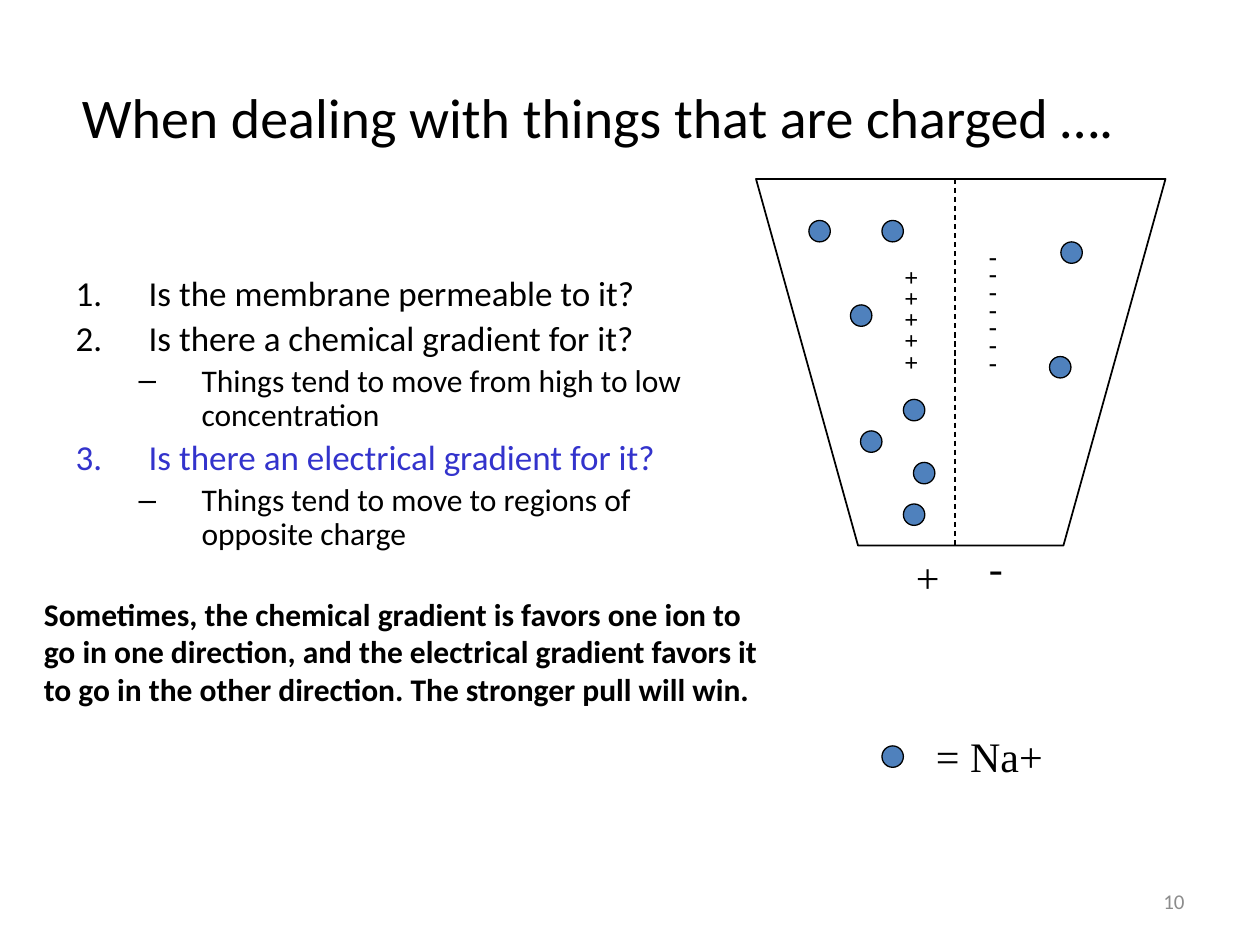
import pptx
import pptx.util
import pptx.dml.color
import pptx.enum.dml
import pptx.enum.shapes
import pptx.enum.text
import pptx.oxml
import pptx.oxml.ns

Inches, Pt = pptx.util.Inches, pptx.util.Pt
ALIGN = pptx.enum.text.PP_ALIGN
ANCHOR = pptx.enum.text.MSO_ANCHOR
AUTO = pptx.enum.text.MSO_AUTO_SIZE
SERIF = "Times New Roman"
BLACK, BLUE, ION = "000000", "3333CC", "4F81BD"

BEAKER = [(6, 1.42), (6.81, 4.33), (8.44, 4.33), (9.25, 1.42)]
DOT = 0.17
IONS = [(6.42, 1.75), (7, 1.75), (6.75, 2.42), (7.17, 3.17), (6.83, 3.42),
        (7.25, 3.67), (7.17, 4), (8.42, 1.92), (8.33, 2.83)]
LEGEND_ION = (7, 5.92)

# Level, text, colour
QUESTIONS = [
    (0, "Is the membrane permeable to it?", BLACK),
    (0, "Is there a chemical gradient for it?", BLACK),
    (1, "Things tend to move from high to low concentration", BLACK),
    (0, "Is there an electrical gradient for it?", BLUE),
    (1, "Things tend to move to regions of opposite charge", BLACK),
]


def rgb(color):
    return pptx.dml.color.RGBColor.from_string(color)


def place(sp, left, top, width, height):
    sp.left, sp.top = Inches(left), Inches(top)
    sp.width, sp.height = Inches(width), Inches(height)


def add_run(p, text, size, color=BLACK, font="Calibri", bold=False):
    r = p.add_run()
    r.text = text
    r.font.size, r.font.name, r.font.bold = Pt(size), font, bold
    r.font.color.rgb = rgb(color)


def set_bullet(p, level):
    """Number the questions, put a dash before the answers."""
    indent, hang = ((0.58, 0.58), (1, 0.5))[level]
    pPr = p._p.get_or_add_pPr()
    pPr.set("marL", str(Inches(indent)))
    pPr.set("indent", str(-Inches(hang)))
    tag, key, value = (("a:buAutoNum", "type", "arabicPeriod"),
                       ("a:buChar", "char", "–"))[level]
    bullet = pptx.oxml.parse_xml(
        f'<{tag} {pptx.oxml.ns.nsdecls("a")} {key}="{value}"/>')
    pPr.append(bullet)


def add_text(slide, box, lines, size, wrap=True, align=ALIGN.LEFT,
             spacing=None, before=0, **style):
    sp = slide.shapes.add_textbox(*map(Inches, box))
    tf = sp.text_frame
    tf.word_wrap = wrap
    for i, line in enumerate(lines):
        p = tf.paragraphs[0] if i == 0 else tf.add_paragraph()
        p.alignment, p.space_before = align, Pt(before)
        if spacing:
            p.line_spacing = spacing
        add_run(p, line, size, **style)
    return sp


def fill_title(sp):
    place(sp, 0, 0.3, 9.5, 1.25)
    tf = sp.text_frame
    tf.auto_size, tf.vertical_anchor = AUTO.NONE, ANCHOR.MIDDLE
    tf.paragraphs[0].alignment = ALIGN.CENTER
    add_run(tf.paragraphs[0], "When dealing with things that are charged ….", 32)


def fill_questions(sp):
    place(sp, 0.5, 1.75, 5.5, 4.95)
    tf = sp.text_frame
    tf.auto_size, tf.margin_top = AUTO.NONE, Inches(0.44)
    for i, (level, text, color) in enumerate(QUESTIONS):
        p = tf.paragraphs[0] if i == 0 else tf.add_paragraph()
        p.level, p.line_spacing = level, 0.9
        set_bullet(p, level)
        add_run(p, text, (20, 18)[level], color)


def add_beaker(slide):
    start, *rest = [(Inches(x), Inches(y)) for x, y in BEAKER]
    fb = slide.shapes.build_freeform(*start)
    fb.add_line_segments(rest, close=True)
    sp = fb.convert_to_shape()
    sp.shadow.inherit = False
    sp.fill.background()
    sp.line.color.rgb, sp.line.width = rgb(BLACK), Pt(1)


def add_membrane(slide):
    line = slide.shapes.add_connector(
        pptx.enum.shapes.MSO_CONNECTOR.STRAIGHT,
        *map(Inches, (7.58, 1.42, 7.58, 4.33)))
    line.line.color.rgb, line.line.width = rgb(BLACK), Pt(0.75)
    line.line.dash_style = pptx.enum.dml.MSO_LINE.DASH
    line._element.spPr.append(pptx.oxml.parse_xml(
        f'<a:effectLst {pptx.oxml.ns.nsdecls("a")}/>'))


def add_ion(slide, left, top):
    sp = slide.shapes.add_shape(pptx.enum.shapes.MSO_SHAPE.OVAL,
                                *map(Inches, (left, top, DOT, DOT)))
    sp.shadow.inherit = False
    sp.fill.solid()
    sp.fill.fore_color.rgb = rgb(ION)
    sp.line.color.rgb, sp.line.width = rgb(BLACK), Pt(0.75)


def main():
    prs = pptx.Presentation()
    prs.slide_width, prs.slide_height = Inches(10), Inches(7.5)
    slide = prs.slides.add_slide(prs.slide_layouts[1])

    # Title, questions and page number
    fill_title(slide.shapes.title)
    fill_questions(slide.placeholders[1])
    number = add_text(slide, (7.17, 6.95, 2.33, 0.4), ["10"], 12,
                      align=ALIGN.RIGHT, color="8C8C8C")
    number.text_frame.vertical_anchor = ANCHOR.MIDDLE

    # Beaker with the charges on each side of the membrane
    add_beaker(slide)
    charges = dict(spacing=0.3, before=7, font=SERIF, bold=True)
    add_text(slide, (7.08, 2.17, 0.42, 0.91), ["+"] * 5, 14, **charges)
    add_text(slide, (7.75, 2, 0.25, 1.07), [" ".join("-" * 7)], 14, **charges)
    add_membrane(slide)
    add_text(slide, (7.75, 4.25, 0.31, 0.5), ["-"], 24, wrap=False, font=SERIF)
    add_text(slide, (7.17, 4.33, 0.39, 0.5), ["+"], 24, wrap=False, font=SERIF)

    # Ions and their legend
    for left, top in IONS + [LEGEND_ION]:
        add_ion(slide, left, top)
    add_text(slide, (7.33, 5.75, 1.25, 0.5), ["= Na+"], 24, before=12, font=SERIF)

    # Conclusion
    add_text(slide, (0.25, 4.67, 5.92, 1.31),
             ["Sometimes, the chemical gradient is favors one ion to go in one "
              "direction, and the electrical gradient favors it to go in the "
              "other direction. The stronger pull will win."], 18, bold=True)

    prs.save("out.pptx")


if __name__ == "__main__":
    main()
